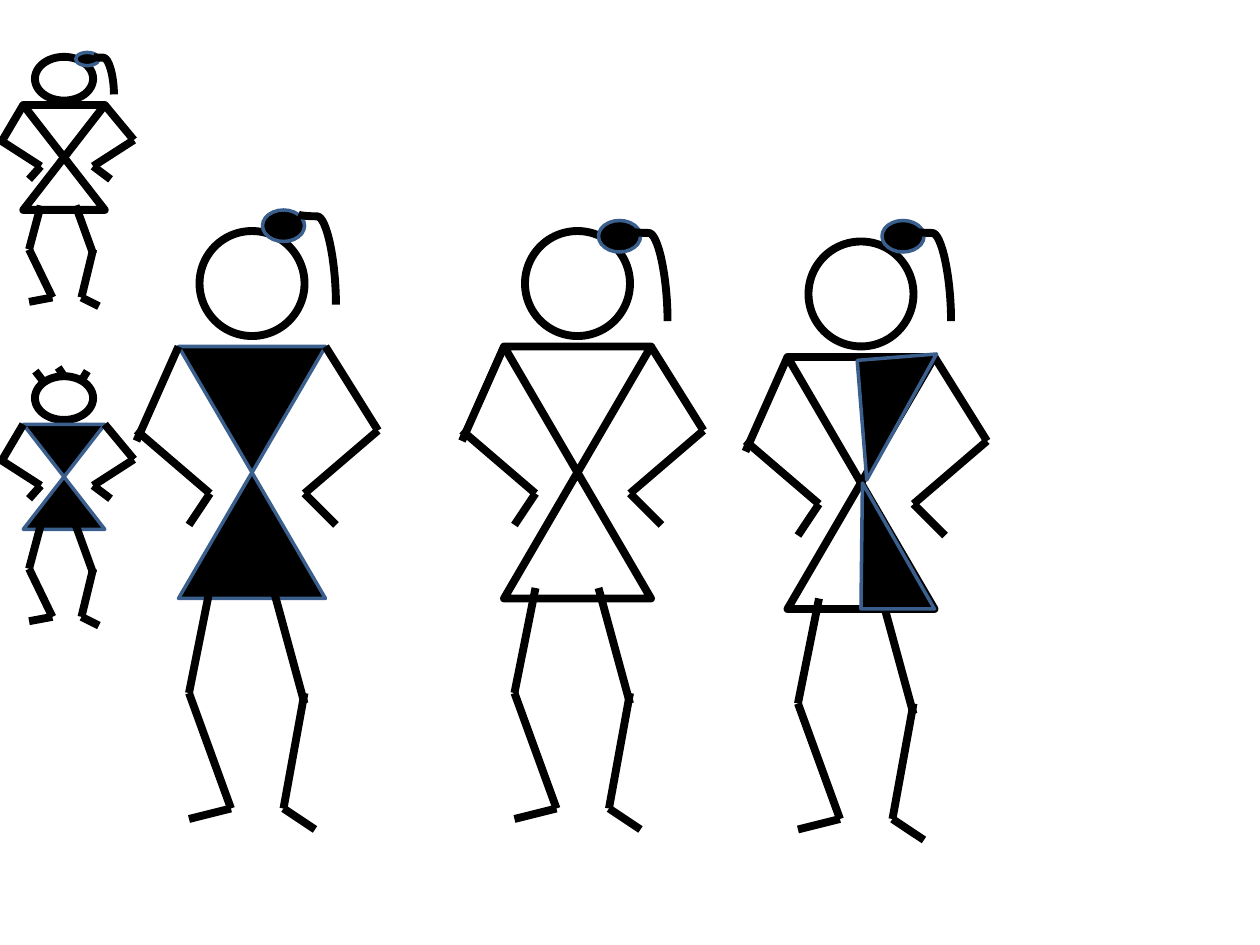
from lxml import etree
from pptx import Presentation
from pptx.dml.color import RGBColor
from pptx.enum.shapes import MSO_CONNECTOR, MSO_SHAPE
from pptx.oxml.ns import qn
from pptx.util import Pt

OVAL, TRIANGLE = MSO_SHAPE.OVAL, MSO_SHAPE.ISOSCELES_TRIANGLE
STRAIGHT, CURVE = MSO_CONNECTOR.STRAIGHT, MSO_CONNECTOR.CURVE
BLACK = RGBColor(0x00, 0x00, 0x00)
WHITE = RGBColor(0xFF, 0xFF, 0xFF)
BLUE = RGBColor(0x3A, 0x5F, 0x8C)

FIGURE_W, FIGURE_H = 138, 342
LARGE = (FIGURE_W, FIGURE_H)
SMALL = (76.5, 142.5)
LIMBS = [
    ((24, 66), (0, 120)), ((42, 150), (0, 114)), ((42, 150), (30, 168)),
    ((108, 66), (138, 114)), ((96, 150), (138, 114)), ((96, 150), (114, 168)),
    ((42, 204), (30, 264)), ((30, 264), (54, 330)), ((54, 330), (30, 336)),
    ((78, 204), (96, 270)), ((96, 264), (84, 330)), ((102, 342), (84, 330)),
]
SPIKES = [((45.5, 8.5), (36.5, -7)), ((66, 0), (60, -12)), ((84.5, 5), (90, -7))]


class Figure:
    """A stick figure drawn in a group and scaled to its box."""

    def __init__(self, slide, box):
        """Draw the limbs' group at box, given as left, top, width, height."""
        self.shapes = slide.shapes.add_group_shape().shapes
        self.x, self.y, w, h = box
        self.sx, self.sy = w / FIGURE_W, h / FIGURE_H

    def place(self, x, y):
        """Turn a point of the figure into a point of the slide."""
        return self.x + x * self.sx, self.y + y * self.sy

    def solid(self, kind, x, y, w, h, fill, line=BLACK, rotation=0):
        """Add a filled and outlined shape."""
        left, top = self.place(x, y)
        s = self.shapes.add_shape(kind, Pt(left), Pt(top), Pt(w * self.sx), Pt(h * self.sy))
        s.shadow.inherit = False
        s.fill.solid()
        s.fill.fore_color.rgb = fill
        s.line.color.rgb = line
        s.line.width = Pt(4.5 if line == BLACK else 2)
        s.rotation = rotation
        return s

    def stroke(self, kind, start, end):
        """Add a thick black connector between two slide points."""
        c = self.shapes.add_connector(kind, *(Pt(v) for v in (*start, *end)))
        c.line.color.rgb = BLACK
        c.line.width = Pt(4.5)
        etree.SubElement(c._element.spPr, qn("a:effectLst"))
        return c

    def lines(self, segments):
        """Add straight strokes between pairs of figure points."""
        for start, end in segments:
            self.stroke(STRAIGHT, self.place(*start), self.place(*end))

    def body(self, dress):
        """Draw head, dress and limbs."""
        outline = BLUE if dress == BLACK else BLACK
        self.solid(OVAL, 36, 0, 60, 60, WHITE)
        self.solid(TRIANGLE, 24, 138, 84, 72, dress, outline)
        self.solid(TRIANGLE, 24, 66, 84, 72, dress, outline, 180)
        self.lines(LIMBS)

    def half_dress(self):
        """Fill the right half of the dress."""
        lower = self.solid(TRIANGLE, 66, 138, 42, 72, BLACK, BLUE)
        lower.adjustments[0] = 0.02
        upper = self.solid(TRIANGLE, 66.5, 66, 45.5, 68.5, BLACK, BLUE, 175.4)
        upper.adjustments[0] = 1

    def ponytail(self, bun, root):
        """Draw a bun and a tail that is turned a quarter and falls from root."""
        self.solid(OVAL, *bun, 24, 18, BLACK, BLUE)
        left, top = self.place(*root)
        w, h = 21.5 * self.sx, 51.5 * self.sy
        x, y = left + (w - h) / 2, top + (h - w) / 2
        tail = self.stroke(CURVE, (x + h, y), (x, y + w))
        pr = tail._element.spPr
        pr.find(qn("a:xfrm")).set("rot", str(270 * 60000))
        geom = pr.find(qn("a:prstGeom"))
        guides = geom.find(qn("a:avLst"))
        if guides is None:
            guides = etree.SubElement(geom, qn("a:avLst"))
        etree.SubElement(guides, qn("a:gd"), name="adj1", fmla="val 2200")


def add_figure(slide, box, dress=WHITE, bun=None, root=None, half=False):
    """Draw one figure in its box, with a ponytail or with spiky hair."""
    fig = Figure(slide, box)
    fig.body(dress)
    if half:
        fig.half_dress()
    if bun:
        fig.ponytail(bun, root)
    else:
        fig.lines(SPIKES)


def main():
    """Build the slide of five figures."""
    prs = Presentation()
    prs.slide_width, prs.slide_height = Pt(720), Pt(540)
    slide = prs.slides.add_slide(prs.slide_layouts[6])
    add_figure(slide, (78, 132, *LARGE), BLACK, (72, -12), (92.5, -9.5))
    add_figure(slide, (264, 132, *LARGE), WHITE, (78, -6), (96, 0))
    add_figure(slide, (426, 138, *LARGE), WHITE, (78, -12), (96, -6), half=True)
    add_figure(slide, (0, 215, *SMALL), BLACK)
    add_figure(slide, (0, 32.5, *SMALL), WHITE, (78, -6), (96, 0))
    prs.save("out.pptx")


if __name__ == "__main__":
    main()
